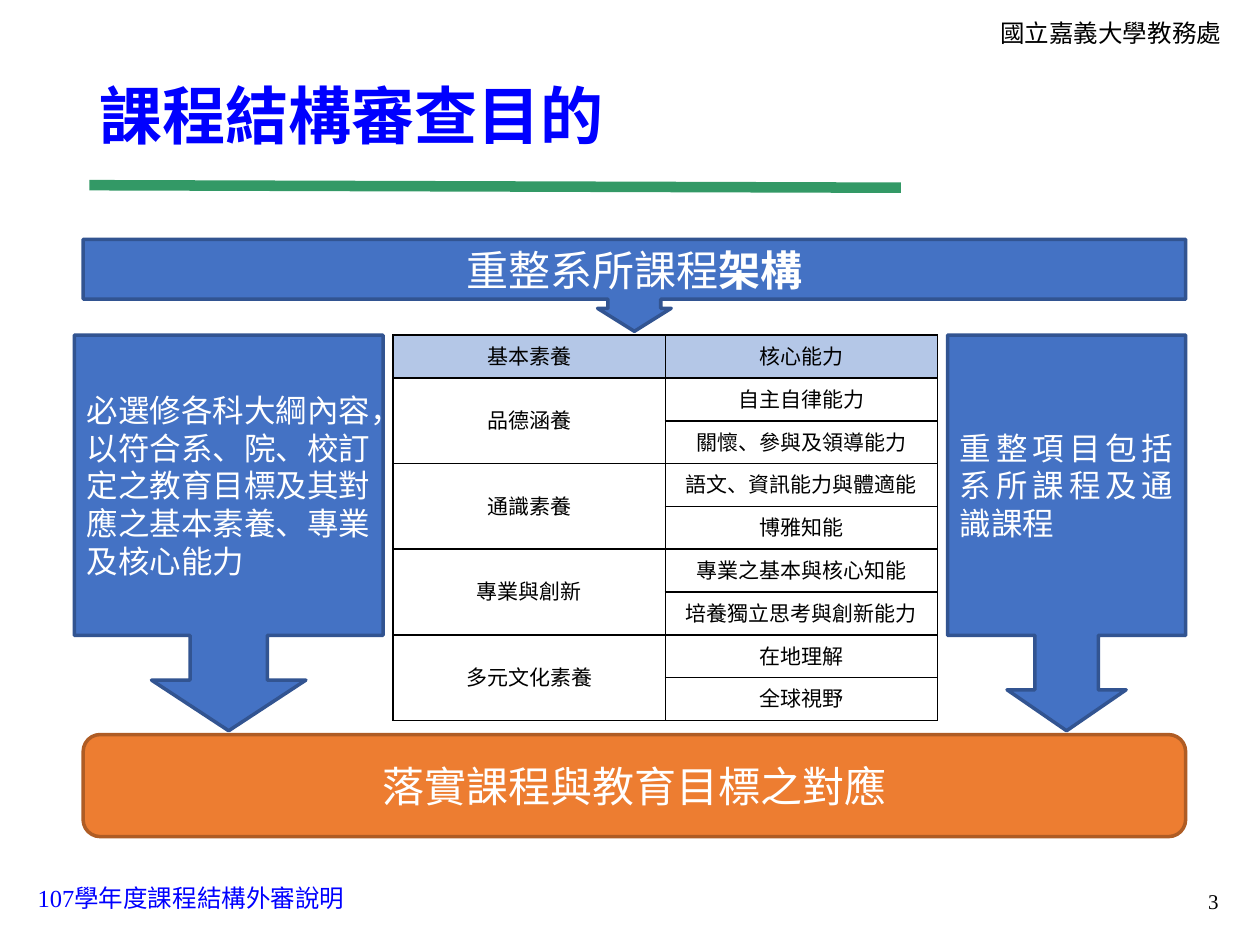
from lxml.etree import SubElement
from pptx import Presentation
from pptx.dml.color import RGBColor
from pptx.enum.shapes import MSO_CONNECTOR, MSO_SHAPE
from pptx.enum.text import MSO_ANCHOR, PP_ALIGN
from pptx.oxml.ns import qn
from pptx.util import Inches, Pt

COLORS = {
    "blue": "4472C4", "navy": "325491", "orange": "ED7D31", "rust": "AF5C24",
    "green": "339966", "title": "0000FF", "head": "B4C7E7",
    "black": "000000", "white": "FFFFFF",
}
SERIF = "Times New Roman"
GROUPS = [
    ("品德涵養", ["自主自律能力", "關懷、參與及領導能力"]),
    ("通識素養", ["語文、資訊能力與體適能", "博雅知能"]),
    ("專業與創新", ["專業之基本與核心知能", "培養獨立思考與創新能力"]),
    ("多元文化素養", ["在地理解", "全球視野"]),
]


def color(name):
    return RGBColor.from_string(COLORS[name])


def write(frame, runs, size, tint, align=PP_ALIGN.LEFT, font=SERIF, bold=None):
    """Fill the first paragraph of a frame and return it."""
    para = frame.paragraphs[0]
    for text in runs:
        para.add_run().text = text
    para.alignment = align
    para.font.name, para.font.size, para.font.bold = font, Pt(size), bold
    para.font.color.rgb = color(tint)
    return para


def add_label(slide, box, text, size, tint, anchor=MSO_ANCHOR.TOP, **style):
    frame = slide.shapes.add_textbox(*map(Inches, box)).text_frame
    frame.word_wrap = True
    frame.vertical_anchor = anchor
    return write(frame, [text], size, tint, **style)


def add_block(slide, kind, box, runs, size, adjust=(), fill="blue",
              edge="navy", **style):
    """Add a filled shape with white text and return its paragraph."""
    shape = slide.shapes.add_shape(kind, *map(Inches, box))
    shape.shadow.inherit = False
    for i, value in enumerate(adjust):
        shape.adjustments[i] = value
    shape.fill.solid()
    shape.fill.fore_color.rgb = color(fill)
    shape.line.color.rgb = color(edge)
    shape.line.width = Pt(2)
    shape.text_frame.word_wrap = True
    shape.text_frame.vertical_anchor = MSO_ANCHOR.MIDDLE
    return write(shape.text_frame, runs, size, "white", **style)


def add_frame(slide, box):
    """Place the title, its rule, and the corner labels of the page."""
    left, top, width, height = box
    rule = slide.shapes.add_connector(
        MSO_CONNECTOR.STRAIGHT, Inches(left + 0.71), Inches(top + 1.47),
        Inches(left + 7.15), Inches(top + 1.49))
    rule.line.color.rgb = color("green")
    rule.line.width = Pt(6)
    SubElement(rule._element.spPr, qn("a:effectLst"))
    right, bottom = left + width, top + height
    add_label(slide, (left + 0.2, bottom - 0.54, 2.66, 0.34),
              "107學年度課程結構外審說明", 14, "title")
    add_label(slide, (right - 2.16, top + 0.09, 2.12, 0.33),
              "國立嘉義大學教務處", 14, "black")
    add_label(slide, (right - 2.48, bottom - 0.55, 2.25, 0.4), "3", 12,
              "black", MSO_ANCHOR.MIDDLE, align=PP_ALIGN.RIGHT)
    title = add_label(slide, (left + 0.69, top + 0.41, 8.62, 1.07),
                      "課程結構審查目的", 36, "title", MSO_ANCHOR.MIDDLE,
                      bold=True)
    title.line_spacing = 0.9


def add_flow(slide, box):
    """Place the callouts and the goal bar around the table."""
    left, top, width, height = box
    call = MSO_SHAPE.DOWN_ARROW_CALLOUT
    bar = left + 0.07, width - 0.07
    head = add_block(slide, call, (bar[0], top, bar[1], 0.73),
                     ["重整系所課程", "架構"], 24, (0.574, 0.4, 0.25, 0.65),
                     align=PP_ALIGN.CENTER)
    head.runs[1].font.bold = True
    add_block(slide, call, (left + width - 1.89, top + 0.76, 1.89, 3.14),
              ["重整項目包括系所課程及通識課程"], 18,
              (0.266, 0.25, 0.172, 0.759), align=PP_ALIGN.JUSTIFY)
    add_block(slide, MSO_SHAPE.ROUNDED_RECTANGLE,
              (bar[0], top + height - 0.81, bar[1], 0.81),
              ["落實課程與教育目標之對應"], 24, fill="orange", edge="rust",
              align=PP_ALIGN.CENTER, font="Noto Sans CJK SC")
    add_block(slide, call, (left, top + 0.76, 2.45, 3.14),
              ["必選修各科大綱內容，以符合系、院、校訂定之教育目標及"
               "其對應之基本素養、專業及核心能力"], 18,
              (0.25, 0.25, 0.164, 0.759))


def set_cell(cell, text="", fill=None):
    props = cell._tc.get_or_add_tcPr()
    for side in ("lnL", "lnR", "lnT", "lnB"):
        line = SubElement(props, qn(f"a:{side}"), w=str(Pt(1)))
        solid = SubElement(line, qn("a:solidFill"))
        SubElement(solid, qn("a:srgbClr"), val=COLORS["black"])
    if fill:
        cell.fill.solid()
        cell.fill.fore_color.rgb = color(fill)
    else:
        cell.fill.background()
    cell.vertical_anchor = MSO_ANCHOR.MIDDLE
    if text:
        para = write(cell.text_frame, [text], 12, "black",
                     PP_ALIGN.CENTER, "Arial")
        para.line_spacing = Pt(16)


def add_grid(slide, box):
    """Place the table that pairs each literacy with its abilities."""
    rows = [("基本素養", "核心能力")]
    for name, skills in GROUPS:
        rows += [(name if i == 0 else "", s) for i, s in enumerate(skills)]
    table = slide.shapes.add_table(len(rows), 2, *map(Inches, box)).table
    for col in table.columns:
        col.width = Inches(box[2] / 2)
    for r, row in enumerate(rows):
        table.rows[r].height = Inches(box[3] / len(rows))
        for c, text in enumerate(row):
            set_cell(table.cell(r, c), text, "head" if r == 0 else None)
    start = 1
    for _, skills in GROUPS:
        end = start + len(skills)
        table.cell(start, 0).merge(table.cell(end - 1, 0))
        start = end


def main():
    deck = Presentation()
    deck.slide_width, deck.slide_height = Inches(10), Inches(7.5)
    slide = deck.slides.add_slide(deck.slide_layouts[6])
    add_frame(slide, (0, 0, 10, 7.5))
    add_flow(slide, (0.59, 1.9, 8.82, 4.74))
    add_grid(slide, (3.12, 2.66, 4.32, 3.06))
    deck.save("out.pptx")


if __name__ == "__main__":
    main()
